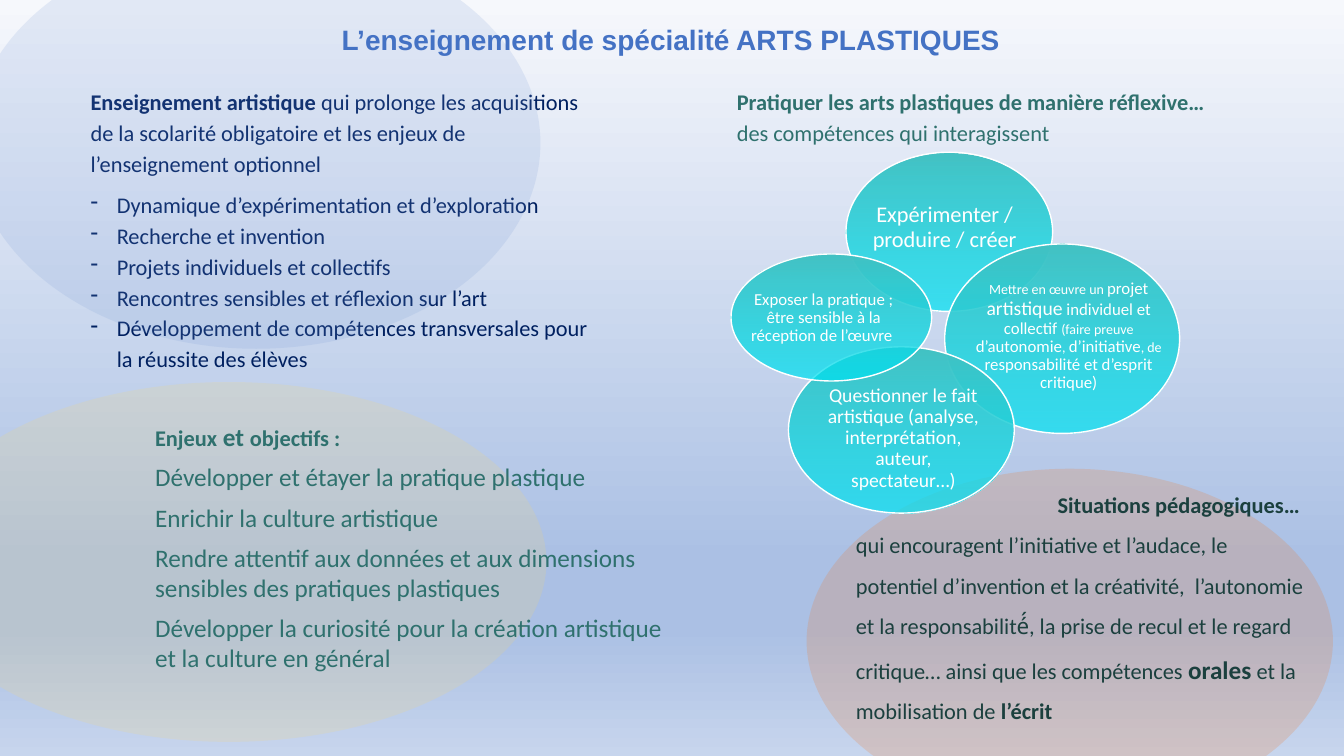
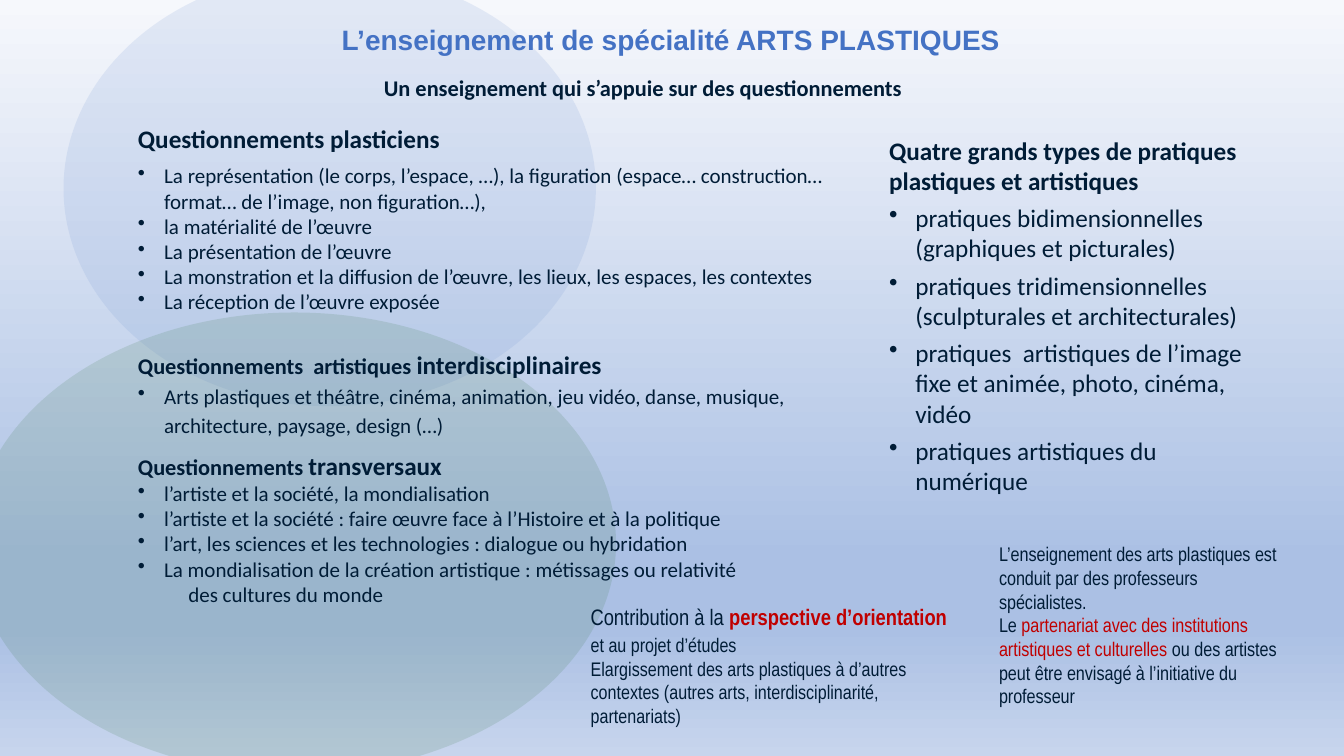
from dataclasses import dataclass
from lxml.etree import SubElement
from pptx import Presentation
from pptx.dml.color import RGBColor
from pptx.enum.shapes import MSO_SHAPE
from pptx.enum.text import MSO_ANCHOR, PP_ALIGN
from pptx.oxml.ns import qn
from pptx.util import Inches, Pt


@dataclass(frozen=True)
class Theme:
    title: str = "4472C4"
    navy: str = "002060"
    teal: str = "2F716E"
    pine: str = "1B403E"
    ink: str = "001C36"
    red: str = "C00000"
    white: str = "FFFFFF"
    blue_disc: str = "789AD5"
    yellow_disc: str = "FFD966"
    orange_disc: str = "ED7D31"
    green_disc: str = "447D50"
    backdrop: tuple = ((0, "F6F8FC", 100), (74, "ABC0E4", 100), (83, "ABC0E4", 100), (100, "C7D5ED", 100))
    bubble: tuple = ((0, "43C2C4", 100), (100, "00E1F1", 71))
    body: str = "Calibri"
    heading: str = "Arial"
    narrow: str = "Arial Narrow"
    tiny: float = 10
    small: float = 12
    note: float = 14
    aside: float = 14.1
    bullet: float = 15
    text: float = 16
    large: float = 18
    headline: float = 20
    hang: float = 0.26


THEME = Theme()


@dataclass
class Para:
    spans: list
    spacing: float = 1
    before: float = 0
    after: float = 0
    left: float = 0
    first: float = 0
    mark: str = ""


@dataclass
class Block:
    place: tuple
    paras: list
    color: str
    size: float = THEME.text
    font: str = THEME.body
    bold: bool = False
    centred: bool = False
    inset: tuple = (0.1, 0.05)


def span(text, **style):
    return text, style


def strong(text, **style):
    return text, {"bold": True, **style}


def bullets(lines, mark="•", **style):
    return [Para([span(line)], left=THEME.hang, first=-THEME.hang, mark=mark, **style) for line in lines]


TITLE = Block((2.67, 0.18, 7.97, 0.42), [Para([span("L’enseignement de spécialité ARTS PLASTIQUES")])],
              THEME.title, THEME.headline, THEME.heading, True, True, (0.04, 0.04))

INTRO = Block((0.8, 0.79, 5.19, 2.97), [
    Para([strong("Enseignement artistique "),
          span("qui prolonge les acquisitions de la scolarité obligatoire et les enjeux de l’enseignement optionnel")],
         spacing=1.15, after=7),
    *bullets([
        "Dynamique d’expérimentation et d’exploration",
        "Recherche et invention",
        "Projets individuels et collectifs",
        "Rencontres sensibles et réflexion sur l’art",
        "Développement de compétences transversales pour la réussite des élèves",
    ], "-", spacing=1.15),
], THEME.navy)

GOALS = Block((1.44, 4.09, 5.38, 2.66), [
    Para([strong("Enjeux", size=THEME.text), strong(" et "), strong("objectifs :", size=THEME.text)],
         spacing=1.15, after=7),
    *[Para([span(goal)], after=7) for goal in [
        "Développer et étayer la pratique plastique",
        "Enrichir la culture artistique",
        "Rendre attentif aux données et aux dimensions sensibles des pratiques plastiques",
        "Développer la curiosité pour la création artistique et la culture en général",
    ]],
], THEME.teal, THEME.large)

SITUATIONS = Block((8.39, 4.69, 4.71, 2.53), [
    Para([
        strong("Situations pédagogiques… "),
        span("qui encouragent l’initiative et l’audace, le potentiel d’invention et la créativité,  l’autonomie "
             "et la responsabilité́, la prise de recul et le regard critique… ainsi que les compétences "),
        strong("orales", size=THEME.large),
        span(" et la mobilisation de "),
        strong("l’écrit"),
    ], spacing=1.5, after=7, first=2),
], THEME.pine)

SKILLS = Block((7.21, 0.79, 5.44, 0.7), [
    Para([strong("Pratiquer les arts plastiques de manière réflexive…")], spacing=1.15),
    Para([span("des compétences qui interagissent")], spacing=1.15),
], THEME.teal)

BUBBLES = [
    ((8.39, 1.51, 2.05, 1.58), (8.55, 1.7, 1.64, 1.12), THEME.text,
     [span("Expérimenter / produire / créer")]),
    ((9.37, 2.42, 2.33, 1.88), (9.65, 2.43, 1.9, 1.81), THEME.small, [
        span("Mettre en œuvre un ", size=THEME.tiny),
        span("projet "),
        span("artistique", size=THEME.note),
        span(" individuel et collectif "),
        span("(faire preuve ", size=THEME.tiny),
        span("d’autonomie"),
        span(", ", size=THEME.tiny),
        span("d’initiative"),
        span(", de ", size=THEME.tiny),
        span("responsabilité et d’esprit critique)"),
    ]),
    ((7.82, 3.44, 2.24, 1.65), (8.17, 3.77, 1.58, 1.16), THEME.note,
     [span("Questionner le fait artistique (analyse, interprétation, auteur, spectateur…)")]),
    ((7.25, 2.52, 1.99, 1.26), (7.38, 2.71, 1.58, 0.89), THEME.small,
     [span("Exposer la pratique ; être sensible à la réception de l’œuvre ")]),
]

TEACHING_DISCS = [
    ((-0.28, -0.62, 5.64, 4.08), THEME.blue_disc, 16),
    ((-0.88, 3.79, 6.3, 3.57), THEME.yellow_disc, 16),
    ((8, 4.65, 5.22, 3.42), THEME.orange_disc, 21),
]

QUESTION_DISCS = [
    ((0.63, -0.29, 5.28, 4.32), THEME.blue_disc, 16),
    ((-0.27, 3.1, 6.38, 4.58), THEME.green_disc, 16),
]

QUESTION_BLOCKS = [
    TITLE,
    Block((1.27, 3.37, 7, 2.72), [
        Para([strong("Questionnements  artistiques ", size=THEME.text),
              strong("interdisciplinaires", size=THEME.large)], spacing=1.15),
        *bullets(["Arts plastiques et théâtre, cinéma, animation, jeu vidéo, danse, musique, "
                  "architecture, paysage, design (…)"], spacing=1.15),
        Para([strong("Questionnements ", size=THEME.text), strong("transversaux", size=THEME.large)],
             spacing=1.15, before=6),
        *bullets([
            "l’artiste et la société, la mondialisation",
            "l’artiste et la société : faire œuvre face à l’Histoire et à la politique",
            "l’art, les sciences et les technologies : dialogue ou hybridation",
            "La mondialisation de la création artistique : métissages ou relativité",
        ]),
        Para([span("des cultures du monde")], left=0.5),
    ], THEME.ink, THEME.bullet),
    Block((9.81, 5.33, 3.05, 1.76), [
        Para([span("L’enseignement des arts plastiques est conduit par des professeurs spécialistes.")]),
        Para([span("Le "),
              span("partenariat avec des institutions artistiques et culturelles", color=THEME.red),
              span(" ou des artistes peut être envisagé à l’initiative du professeur")]),
    ], THEME.ink, THEME.aside, THEME.narrow),
    Block((5.76, 5.89, 3.87, 1.39), [
        Para([span("Contribution à la ", size=THEME.text),
              strong("perspective d’orientation ", size=THEME.text, color=THEME.red),
              span("et au projet d’études")], spacing=1.15),
        Para([span("Elargissement des arts plastiques à d’autres contextes "
                   "(autres arts, interdisciplinarité, partenariats)")]),
    ], THEME.ink, THEME.note, THEME.narrow),
    Block((1.27, 1.17, 7.11, 2.02), [
        Para([strong("Questionnements plasticiens", size=THEME.large)], after=7),
        *bullets([
            "La représentation (le corps, l’espace, …), la figuration (espace… construction… "
            "format… de l’image, non figuration…),",
            "la matérialité de l’œuvre",
            "La présentation de l’œuvre",
            "La monstration et la diffusion de l’œuvre, les lieux, les espaces, les contextes",
            "La réception de l’œuvre exposée",
        ]),
    ], THEME.ink, THEME.bullet),
    Block((3.71, 0.69, 7.36, 0.37),
          [Para([strong("Un enseignement qui s’appuie sur des questionnements")], after=7)], THEME.ink),
    Block((8.72, 1.29, 3.98, 3.71), [
        Para([strong("Quatre grands types de pratiques plastiques et artistiques")], after=5),
        *bullets([
            "pratiques bidimensionnelles (graphiques et picturales)",
            "pratiques tridimensionnelles (sculpturales et architecturales)",
            "pratiques  artistiques de l’image fixe et animée, photo, cinéma, vidéo",
            "pratiques artistiques du numérique",
        ], after=5),
    ], THEME.ink, THEME.large),
]


def inches(place):
    return [Inches(value) for value in place]


def add_alpha(color_element, percent):
    if percent < 100:
        SubElement(color_element, qn("a:alpha"), val=str(percent * 1000))


def set_gradient(fill, element, stops):
    fill.gradient()
    fill.gradient_angle = 270
    stop_list = next(element.iter(qn("a:gsLst")))
    for stop in list(stop_list):
        stop_list.remove(stop)
    for position, color, opacity in stops:
        stop = SubElement(stop_list, qn("a:gs"), pos=str(position * 1000))
        add_alpha(SubElement(stop, qn("a:srgbClr"), val=color), opacity)


def add_page(deck):
    page = deck.slides.add_slide(deck.slide_layouts[6])
    set_gradient(page.background.fill, page.element, THEME.backdrop)
    return page


def add_ellipse(page, place):
    ellipse = page.shapes.add_shape(MSO_SHAPE.OVAL, *inches(place))
    ellipse.shadow.inherit = False
    return ellipse


def add_disc(page, place, color, opacity):
    disc = add_ellipse(page, place)
    disc.fill.solid()
    disc.fill.fore_color.rgb = RGBColor.from_string(color)
    add_alpha(next(disc.element.iter(qn("a:srgbClr"))), opacity)
    disc.line.fill.background()


def add_block(page, block):
    box = page.shapes.add_textbox(*inches(block.place))
    frame = box.text_frame
    frame.word_wrap = True
    frame.margin_left = frame.margin_right = Inches(block.inset[0])
    frame.margin_top = frame.margin_bottom = Inches(block.inset[1])
    frame.vertical_anchor = MSO_ANCHOR.MIDDLE if block.centred else MSO_ANCHOR.TOP
    for index, item in enumerate(block.paras):
        para = frame.add_paragraph() if index else frame.paragraphs[0]
        para.alignment = PP_ALIGN.CENTER if block.centred else PP_ALIGN.LEFT
        para.line_spacing = item.spacing
        para.space_before = Pt(item.before)
        para.space_after = Pt(item.after)
        properties = para._p.get_or_add_pPr()
        properties.set("marL", str(Inches(item.left)))
        properties.set("indent", str(Inches(item.first)))
        if item.mark:
            SubElement(properties, qn("a:buChar"), char=item.mark)
        for text, style in item.spans:
            run = para.add_run()
            run.text = text
            run.font.name = block.font
            run.font.size = Pt(style.get("size", block.size))
            run.font.bold = style.get("bold", block.bold)
            run.font.color.rgb = RGBColor.from_string(style.get("color", block.color))


def add_bubble(page, place, text_place, size, spans):
    bubble = add_ellipse(page, place)
    set_gradient(bubble.fill, bubble.element, THEME.bubble)
    bubble.line.color.rgb = RGBColor.from_string(THEME.white)
    bubble.line.width = Pt(1)
    add_block(page, Block(text_place, [Para(spans, spacing=0.9)], THEME.white, size,
                          centred=True, inset=(0.02, 0.02)))


def build_teaching(deck):
    page = add_page(deck)
    add_block(page, INTRO)
    for disc in TEACHING_DISCS:
        add_disc(page, *disc)
    for block in (GOALS, SITUATIONS, SKILLS):
        add_block(page, block)
    for bubble in BUBBLES:
        add_bubble(page, *bubble)
    add_block(page, TITLE)


def build_questions(deck):
    page = add_page(deck)
    for disc in QUESTION_DISCS:
        add_disc(page, *disc)
    for block in QUESTION_BLOCKS:
        add_block(page, block)


def main():
    deck = Presentation()
    deck.slide_width, deck.slide_height = Inches(13.33), Inches(7.5)
    build_teaching(deck)
    build_questions(deck)
    deck.save("out.pptx")


if __name__ == "__main__":
    main()
